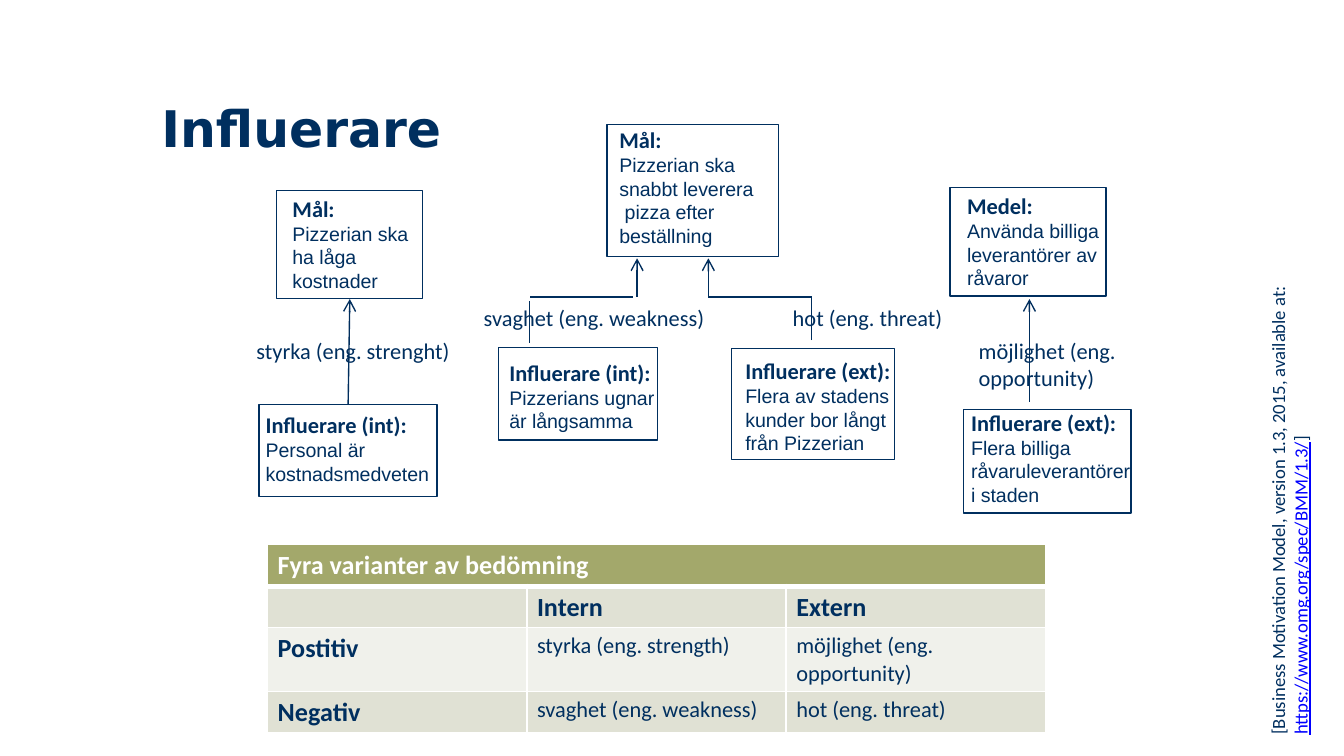
from dataclasses import dataclass

from lxml import etree
from pptx import Presentation
from pptx import util as u
from pptx.dml.color import RGBColor
from pptx.enum import shapes, text
from pptx.oxml import ns


@dataclass(frozen=True)
class Theme:
    ink: str = "002F5F"
    arrow: str = "002E5D"
    paper: str = "FFFFFF"
    link: str = "0000FF"
    olive: str = "A3A86B"
    dark_band: str = "E0E1D4"
    light_band: str = "F0F1EB"
    title_font: str = "DejaVu Sans"
    label_font: str = "Calibri"
    body_font: str = "Arial"
    title_size: float = 27
    table_size: float = 14
    label_size: float = 12
    body_size: float = 10.5
    source_size: float = 10
    line: float = 0.75


def points(*values):
    return [u.Pt(value) for value in values]


def rgb(colour):
    return RGBColor.from_string(colour)


class InfluencerSlide:
    def __init__(self, deck, theme):
        self.theme = theme
        self.slide = deck.slides.add_slide(deck.slide_layouts[5])

    def style(self, paragraph, font, size, colour, bold=False):
        for run in paragraph.runs:
            run.font.name = font
            run.font.size = u.Pt(size)
            run.font.bold = bold
            run.font.color.rgb = rgb(colour)

    def title(self, wording, frame):
        heading = self.slide.shapes.title
        heading.left, heading.top, heading.width, heading.height = points(*frame)
        heading.text_frame.text = wording
        heading.text_frame.vertical_anchor = text.MSO_ANCHOR.MIDDLE
        paragraph = heading.text_frame.paragraphs[0]
        paragraph.alignment = text.PP_ALIGN.LEFT
        self.style(paragraph, self.theme.title_font, self.theme.title_size, self.theme.ink, True)

    def label(self, wording, frame):
        caption = self.slide.shapes.add_textbox(*points(*frame))
        caption.text_frame.word_wrap = True
        caption.text_frame.text = wording
        for paragraph in caption.text_frame.paragraphs:
            self.style(paragraph, self.theme.label_font, self.theme.label_size, self.theme.ink)
        return caption

    def card(self, heading, body, frame, label_frame):
        box = self.slide.shapes.add_shape(shapes.MSO_SHAPE.RECTANGLE, *points(*frame))
        box.shadow.inherit = False
        box.fill.solid()
        box.fill.fore_color.rgb = rgb(self.theme.paper)
        box.line.color.rgb = rgb(self.theme.ink)
        box.line.width = u.Pt(self.theme.line)
        caption = self.label(f"{heading}\n{body}", label_frame)
        first, *rest = caption.text_frame.paragraphs
        self.style(first, self.theme.label_font, self.theme.label_size, self.theme.ink, True)
        for paragraph in rest:
            self.style(paragraph, self.theme.body_font, self.theme.body_size, self.theme.ink)

    def line(self, start, end, arrow=False):
        link = self.slide.shapes.add_connector(
            shapes.MSO_CONNECTOR.STRAIGHT, *points(*start, *end))
        link.line.color.rgb = rgb(self.theme.arrow)
        link.line.width = u.Pt(self.theme.line)
        if arrow:
            etree.SubElement(link.line._get_or_add_ln(), ns.qn("a:tailEnd"), type="arrow")
        etree.SubElement(link._element.spPr, ns.qn("a:effectLst"))

    def source(self, parts, frame):
        citation = self.label("", frame)
        citation.rotation = 270
        paragraph = citation.text_frame.paragraphs[0]
        for wording, is_link in parts:
            run = paragraph.add_run()
            run.text = wording
        self.style(paragraph, self.theme.label_font, self.theme.source_size, self.theme.ink)
        for run, (wording, is_link) in zip(paragraph.runs, parts):
            if is_link:
                run.font.underline = True
                run.font.color.rgb = rgb(self.theme.link)

    def border(self, cell, side, width):
        edge = etree.SubElement(
            cell._tc.get_or_add_tcPr(), ns.qn(f"a:ln{side}"), w=str(u.Pt(width)))
        fill = etree.SubElement(edge, ns.qn("a:solidFill"))
        etree.SubElement(fill, ns.qn("a:srgbClr"), val=self.theme.paper)

    def cell(self, cell, wording, row, column):
        theme = self.theme
        widths = {"L": 1, "R": 1, "T": 3 if row == 1 else 1, "B": 3 if row == 0 else 1}
        for side, width in widths.items():
            self.border(cell, side, width)
        cell.fill.solid()
        bands = (theme.olive, theme.dark_band, theme.light_band, theme.dark_band)
        cell.fill.fore_color.rgb = rgb(bands[row])
        cell.margin_left = cell.margin_right = u.Pt(5.4)
        cell.margin_top = cell.margin_bottom = u.Pt(2.7)
        cell.text_frame.text = wording
        paragraph = cell.text_frame.paragraphs[0]
        is_heading = row < 2 or column == 0
        size = theme.table_size if is_heading else theme.label_size
        colour = theme.paper if row == 0 else theme.ink
        self.style(paragraph, theme.label_font, size, colour, is_heading)
        if not wording:
            paragraph._p.get_or_add_endParaRPr().set("sz", str(size * 100))

    def table(self, rows, heights, frame):
        grid = self.slide.shapes.add_table(len(rows), len(rows[0]), *points(*frame)).table
        for row, (wordings, height) in enumerate(zip(rows, heights)):
            grid.rows[row].height = u.Pt(height)
            for column, wording in enumerate(wordings):
                self.cell(grid.cell(row, column), wording, row, column)
        grid.cell(0, 0).merge(grid.cell(0, len(rows[0]) - 1))


def main():
    deck = Presentation()
    deck.slide_width, deck.slide_height = points(720, 405)
    page = InfluencerSlide(deck, Theme())
    page.title("Influerare", (79.2, 44.6, 539.3, 46.8))

    cards = [
        ("Mål:", "Pizzerian ska snabbt leverera\v pizza efter beställning",
         (325.2, 66.8, 91.8, 70.6), (324.7, 64.1, 87.8, 72.7)),
        ("Influerare (ext):", "Flera av stadens kunder bor långt från Pizzerian",
         (391.8, 186.7, 87.6, 59.5), (392.2, 187.8, 106.6, 59.8)),
        ("Influerare (int):", "Pizzerians ugnar är långsamma",
         (267.2, 186.2, 85, 49.5), (265.8, 188.8, 100.8, 47.5)),
        ("Mål:", "Pizzerian ska ha låga kostnader",
         (148.3, 102, 78, 58), (149.6, 100.8, 79.2, 59.8)),
        ("Influerare (int):", "Personal är kostnadsmedveten",
         (138.7, 216.7, 95.4, 49.5), (135.2, 216.9, 104.4, 47.5)),
        ("Influerare (ext):", "Flera billiga\nråvaruleverantörer i staden",
         (516.2, 219.3, 89.8, 55.6), (513.2, 215.5, 100.8, 59.8)),
        ("Medel:", "Använda billiga leverantörer av råvaror",
         (508.9, 100.6, 83.6, 58), (511, 99.5, 92.2, 59.8)),
    ]
    for card in cards:
        page.card(*card)

    labels = [
        ("hot (eng. threat)", (417.6, 159.3, 114.5, 21.6)),
        ("svaghet (eng. weakness)", (252, 159.3, 135.4, 21.6)),
        ("styrka (eng. strenght)", (130.3, 177.1, 135.4, 21.6)),
        ("möjlighet (eng. opportunity)", (517.2, 177.1, 101.5, 36)),
    ]
    for label in labels:
        page.label(*label)

    arrows = [
        ((341.3, 159.1), (341.3, 138.4)),
        ((379.5, 159.1), (379.5, 138.4)),
        ((186.5, 216.7), (187.4, 160.2)),
        ((551.5, 215.3), (551.5, 160.2)),
    ]
    for start, end in arrows:
        page.line(start, end, arrow=True)
    branches = [
        ((283.7, 183.6), (283.7, 161.3)),
        ((434.9, 182.2), (434.9, 159.1)),
        ((434.9, 159.1), (379.5, 159.1)),
        ((339.1, 159.1), (283.7, 159.1)),
    ]
    for start, end in branches:
        page.line(start, end)

    assessments = [
        ("Fyra varianter av bedömning", "", ""),
        ("", "Intern", "Extern"),
        ("Postitiv", "styrka (eng. strength)", "möjlighet (eng. opportunity)"),
        ("Negativ", "svaghet (eng. weakness)", "hot (eng. threat)"),
    ]
    page.table(assessments, (22, 22, 34, 22), (143.4, 291.8, 416.7, 100))
    page.source([
        ("[Business Motivation Model, version 1.3, 2015, available at: ", False),
        ("https://www.omg.org/spec/BMM/1.3/", True),
        ("]", False),
    ], (558.7, 252.7, 264.2, 31.7))
    deck.save("out.pptx")


if __name__ == "__main__":
    main()
